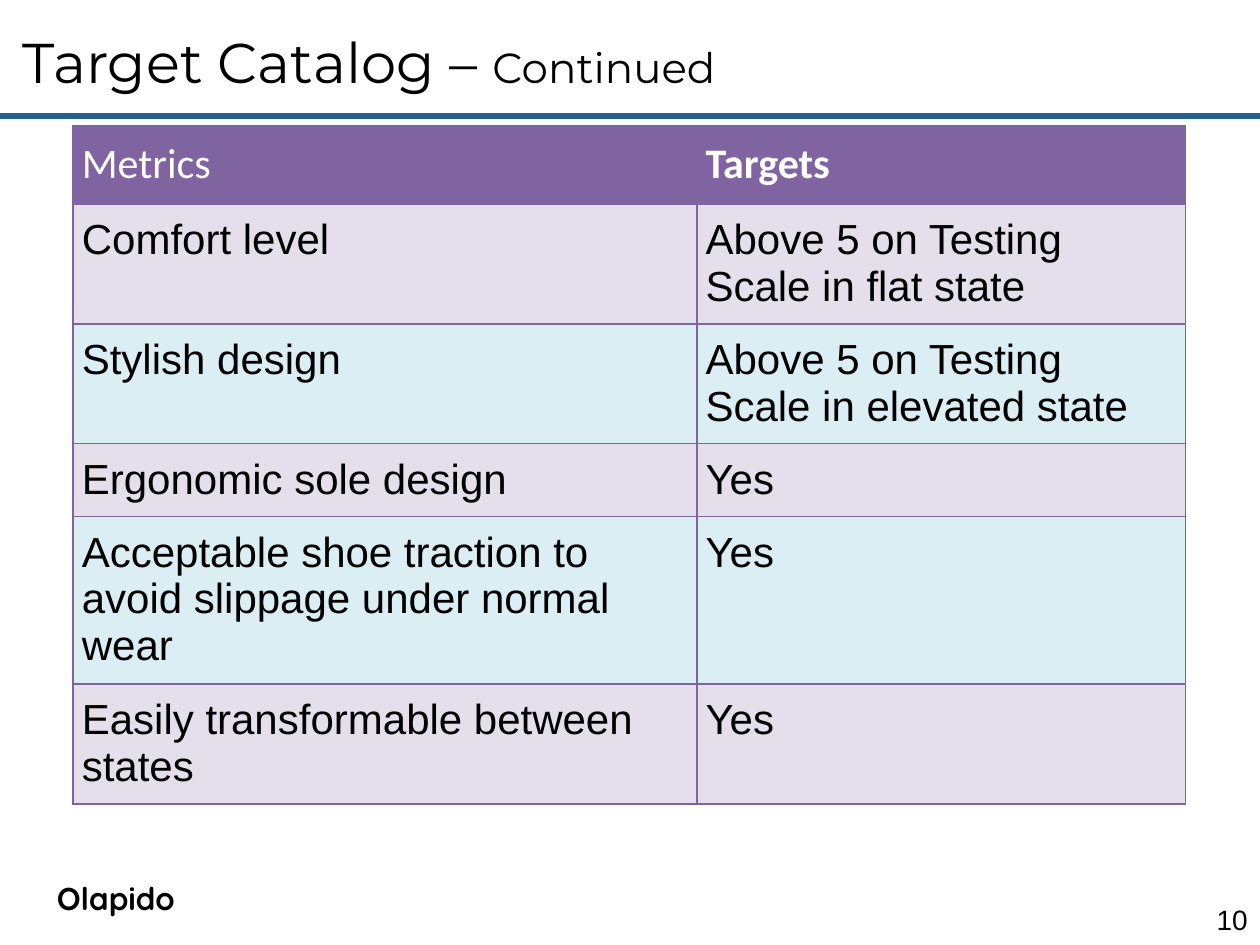
from dataclasses import dataclass

import lxml.etree
import pptx
import pptx.dml.color
import pptx.enum.shapes
import pptx.enum.text
import pptx.oxml.ns
import pptx.util

Inches = pptx.util.Inches
Pt = pptx.util.Pt
qn = pptx.oxml.ns.qn
ALIGN = pptx.enum.text.PP_ALIGN
ANCHOR = pptx.enum.text.MSO_ANCHOR

COLORS = {
    "text": "000000",
    "white": "FFFFFF",
    "rule": "236192",
    "purple": "8064A2",
    "lilac": "E5DFEC",
    "aqua": "DAEEF3",
}


@dataclass
class Span:
    text: str
    size: float
    font: str
    bold: bool = False
    color: str = "text"


@dataclass
class Label:
    left: float
    top: float
    width: float
    height: float
    spans: list[Span]
    align: ALIGN = ALIGN.LEFT
    anchor: ANCHOR = ANCHOR.TOP
    spacing: float = 1.0


@dataclass
class Row:
    metric: str
    target: str
    height: float


LABELS = [
    Label(0.08, 0.17, 7.17, 0.64, [Span("Target Catalog – ", 32, "Montserrat"),
                                   Span("Continued", 24, "Montserrat")]),
    Label(9.5, 7.1, 0.5, 0.4, [Span("10", 16, "Arial")],
          align=ALIGN.RIGHT, anchor=ANCHOR.MIDDLE),
    Label(0.17, 6.78, 1.5, 0.56, [Span("Olapido", 18, "Quicksand", bold=True)],
          align=ALIGN.CENTER, spacing=1.5),
]

COLUMN_WIDTHS = [4.95, 3.88]
ROWS = [
    Row("Metrics", "Targets", 0.62),
    Row("Comfort level", "Above 5 on Testing Scale in flat state", 0.95),
    Row("Stylish design", "Above 5 on Testing Scale in elevated state", 0.95),
    Row("Ergonomic sole design", "Yes", 0.58),
    Row("Acceptable shoe traction to avoid slippage under normal wear", "Yes", 1.33),
    Row("Easily transformable between states", "Yes", 0.95),
]


def rgb(name: str) -> pptx.dml.color.RGBColor:
    return pptx.dml.color.RGBColor.from_string(COLORS[name])


def format_run(r, span: Span) -> None:
    r.font.size = Pt(span.size)
    r.font.name = span.font
    r.font.bold = span.bold
    r.font.color.rgb = rgb(span.color)


def add_label(s, label: Label) -> None:
    box = s.shapes.add_textbox(Inches(label.left), Inches(label.top),
                               Inches(label.width), Inches(label.height))
    tf = box.text_frame
    tf.word_wrap = True
    tf.vertical_anchor = label.anchor
    p = tf.paragraphs[0]
    p.alignment = label.align
    p.line_spacing = label.spacing
    for span in label.spans:
        r = p.add_run()
        r.text = span.text
        format_run(r, span)


def add_rule(s, y: float) -> None:
    line = s.shapes.add_connector(pptx.enum.shapes.MSO_CONNECTOR.STRAIGHT,
                                  Inches(0), Inches(y), Inches(10), Inches(y))
    line.line.color.rgb = rgb("rule")
    line.line.width = Pt(3.5)
    lxml.etree.SubElement(line._element.spPr, qn("a:effectLst"))


def add_borders(cell, color: str, width: float) -> None:
    tc_pr = cell._tc.get_or_add_tcPr()
    for side in ("a:lnL", "a:lnR", "a:lnT", "a:lnB"):
        ln = lxml.etree.SubElement(tc_pr, qn(side), w=str(Pt(width)))
        fill = lxml.etree.SubElement(ln, qn("a:solidFill"))
        lxml.etree.SubElement(fill, qn("a:srgbClr"), val=COLORS[color])


def fill_cell(cell, span: Span, fill: str) -> None:
    cell.margin_left = cell.margin_right = Inches(0.07)
    cell.margin_top = cell.margin_bottom = Inches(0.1)
    add_borders(cell, "purple", 1)
    cell.fill.solid()
    cell.fill.fore_color.rgb = rgb(fill)
    cell.text_frame.text = span.text
    format_run(cell.text_frame.paragraphs[0].runs[0], span)


def add_targets_table(s, left: float, top: float) -> None:
    table = s.shapes.add_table(
        len(ROWS), len(COLUMN_WIDTHS), Inches(left), Inches(top),
        Inches(sum(COLUMN_WIDTHS)), Inches(sum(row.height for row in ROWS))).table
    table.first_row = False
    table.horz_banding = False
    for column, width in zip(table.columns, COLUMN_WIDTHS):
        column.width = Inches(width)
    for i, row in enumerate(ROWS):
        table.rows[i].height = Inches(row.height)
        for j, text in enumerate((row.metric, row.target)):
            if i == 0:
                span, fill = Span(text, 24, "Calibri", j == 1, "white"), "purple"
            else:
                span, fill = Span(text, 24, "Arial"), "lilac" if i % 2 else "aqua"
            fill_cell(table.cell(i, j), span, fill)


def main() -> None:
    prs = pptx.Presentation()
    prs.slide_width = Inches(10)
    prs.slide_height = Inches(7.5)
    s = prs.slides.add_slide(prs.slide_layouts[6])

    # Rule under the title
    add_rule(s, 0.92)
    # Metrics and their targets
    add_targets_table(s, 0.58, 1)
    # Title, page number and project name
    for label in LABELS:
        add_label(s, label)

    prs.save("out.pptx")


if __name__ == "__main__":
    main()
